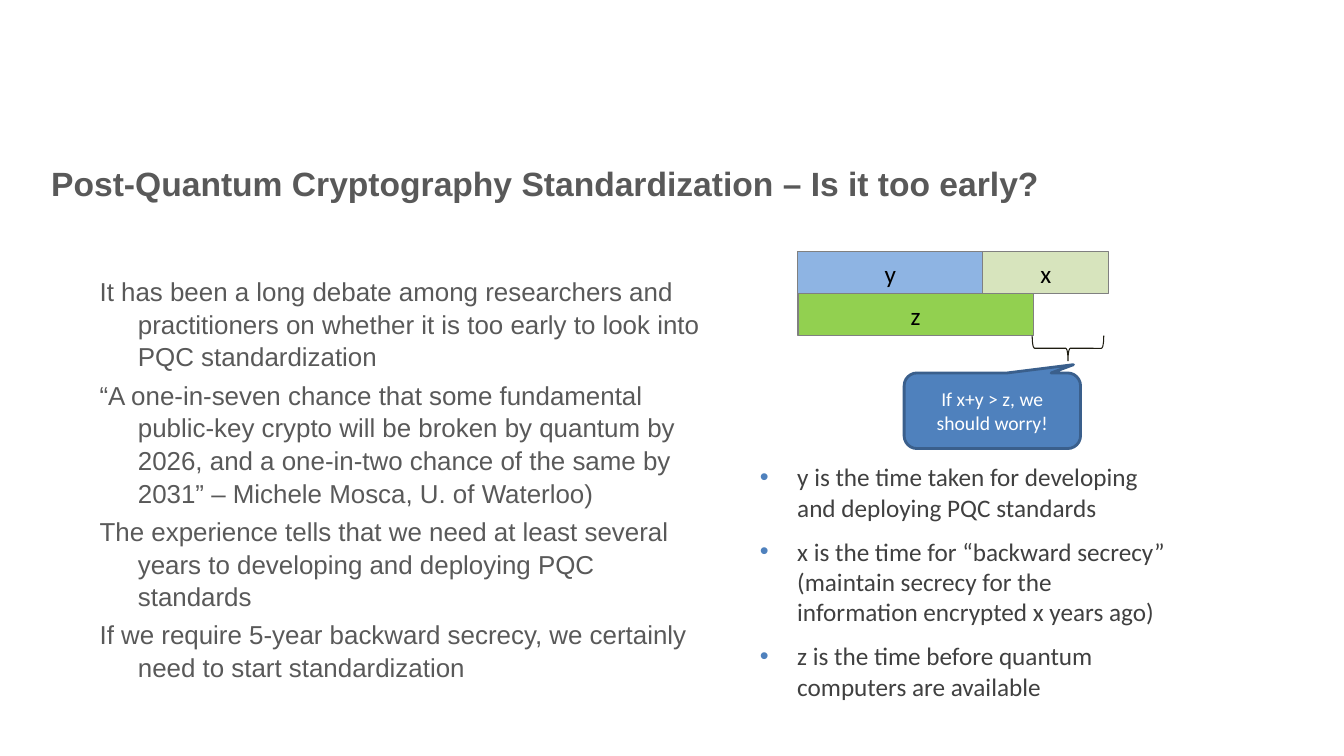
"""Builds the slide on whether post-quantum standardization is too early."""
from lxml import etree
from pptx import Presentation
from pptx import util as u
from pptx.dml.color import RGBColor
from pptx.enum import shapes, text
from pptx.oxml.ns import qn

GREY = RGBColor(0x59, 0x59, 0x59)
CHARCOAL = RGBColor(0x40, 0x40, 0x40)
BLACK = RGBColor(0, 0, 0)
WHITE = RGBColor(0xFF, 0xFF, 0xFF)
BLUE = RGBColor(0x4F, 0x81, 0xBD)
NAVY = RGBColor(0x3A, 0x5F, 0x8C)
SKY = RGBColor(0x8E, 0xB4, 0xE3)
SAGE = RGBColor(0xD7, 0xE4, 0xBD)
GREEN = RGBColor(0x92, 0xD0, 0x50)
EDGE = RGBColor(0x80, 0x80, 0x80)
INK = RGBColor(0x1E, 0x1C, 0x11)

COLS, ROWS = 160, 90
BAR_LEFT, BAR_TOP, BAR_H = 95, 30, 5

TITLE = "Post-Quantum Cryptography Standardization – Is it too early?"
DEBATE = [
    "It has been a long debate among researchers and practitioners on whether "
    "it is too early to look into PQC standardization",
    "“A one-in-seven chance that some fundamental public-key crypto will be "
    "broken by quantum by 2026, and a one-in-two chance of the same by 2031” "
    "– Michele Mosca, U. of Waterloo)",
    "The experience tells that we need at least several years to developing "
    "and deploying PQC standards",
    "If we require 5-year backward secrecy, we certainly need to start "
    "standardization",
]
LEGEND = [
    "y is the time taken for developing and deploying PQC standards",
    "x is the time for “backward secrecy” (maintain secrecy for the "
    "information encrypted x years ago)",
    "z is the time before quantum computers are available",
]


class Deck:
    """Holds the style, the grid and the current slide."""

    def __init__(self):
        self.prs = Presentation()
        self.prs.slide_width, self.prs.slide_height = u.Inches(13.33), u.Inches(7.5)
        self.s = self.prs.slides.add_slide(self.prs.slide_layouts[6])

    def box(self, col, row, cols, rows):
        w, h = self.prs.slide_width / COLS, self.prs.slide_height / ROWS
        return [round(v) for v in (col * w, row * h, cols * w, rows * h)]

    def fill_text(self, tf, lines, font, color, para=None, anchor=text.MSO_ANCHOR.TOP,
                  hang=0, bullet=None):
        tf.word_wrap = True
        tf.vertical_anchor = anchor
        for i, line in enumerate(lines):
            p = tf.add_paragraph() if i else tf.paragraphs[0]
            if hang:
                pPr = p._p.get_or_add_pPr()
                pPr.set("marL", str(u.Inches(hang)))
                pPr.set("indent", str(-u.Inches(hang)))
                if bullet:
                    clr = etree.SubElement(pPr, qn("a:buClr"))
                    etree.SubElement(clr, qn("a:srgbClr"), val=str(bullet))
                    etree.SubElement(pPr, qn("a:buFont"), typeface="Arial")
                    etree.SubElement(pPr, qn("a:buChar"), char="•")
            for name, value in (para or {}).items():
                if i or name != "space_before":
                    setattr(p, name, value)
            r = p.add_run()
            r.text = line
            for name, value in font.items():
                setattr(r.font, name, value)
            r.font.color.rgb = color

    def text(self, at, lines, font, color, **style):
        sp = self.s.shapes.add_textbox(*self.box(*at))
        self.fill_text(sp.text_frame, lines, font, color, **style)

    def shape(self, kind, at, line, weight, fill=None):
        sp = self.s.shapes.add_shape(kind, *self.box(*at))
        sp.shadow.inherit = False
        if fill is None:
            sp.fill.background()
        else:
            sp.fill.solid()
            sp.fill.fore_color.rgb = fill
        sp.line.color.rgb = line
        sp.line.width = u.Pt(weight)
        return sp

    def label(self, sp, words, size, color):
        self.fill_text(sp.text_frame, [words], {"name": "Calibri", "size": u.Pt(size)}, color,
                       {"alignment": text.PP_ALIGN.CENTER}, text.MSO_ANCHOR.MIDDLE)

    def bar(self, name, col, row, cols, fill):
        at = BAR_LEFT + col, BAR_TOP + row * BAR_H, cols, BAR_H
        sp = self.shape(shapes.MSO_SHAPE.RECTANGLE, at, EDGE, 0.75, fill)
        self.label(sp, name, 18, BLACK)

    def brace(self, at):
        sp = self.shape(shapes.MSO_SHAPE.RIGHT_BRACE, at, INK, 0.75)
        sp.rotation = 90

    def callout(self, at, words):
        sp = self.shape(shapes.MSO_SHAPE.ROUNDED_RECTANGULAR_CALLOUT, at, NAVY, 2, BLUE)
        for i, value in enumerate((0.46, -0.61, 0.17)):
            sp.adjustments[i] = value
        self.label(sp, words, 14, WHITE)


def main():
    d = Deck()
    d.text((4.92, 8.04, 139, 16.8), [TITLE],
           {"name": "Arial", "size": u.Pt(24), "bold": True}, GREY,
           para={"line_spacing": u.Pt(26)}, anchor=text.MSO_ANCHOR.BOTTOM)
    d.text((10.68, 32.04, 75.24, 50.04), DEBATE,
           {"name": "Arial", "size": u.Pt(18.5)}, GREY,
           para={"line_spacing": 1.05, "space_before": u.Pt(4)}, hang=0.38)
    for bar in (("y", 0, 0, 22, SKY), ("x", 22, 0, 15, SAGE), ("z", 0, 1, 28, GREEN)):
        d.bar(*bar)
    d.brace((125.64, 37.2, 3, 8.52))
    d.callout((107.64, 44.4, 21, 9), "If x+y > z, we should worry!")
    d.text((89.28, 54.36, 51.72, 32.16), LEGEND,
           {"name": "Calibri", "size": u.Pt(18)}, CHARCOAL,
           para={"space_before": u.Pt(10)}, hang=0.37, bullet=BLUE)
    d.prs.save("out.pptx")


if __name__ == "__main__":
    main()
